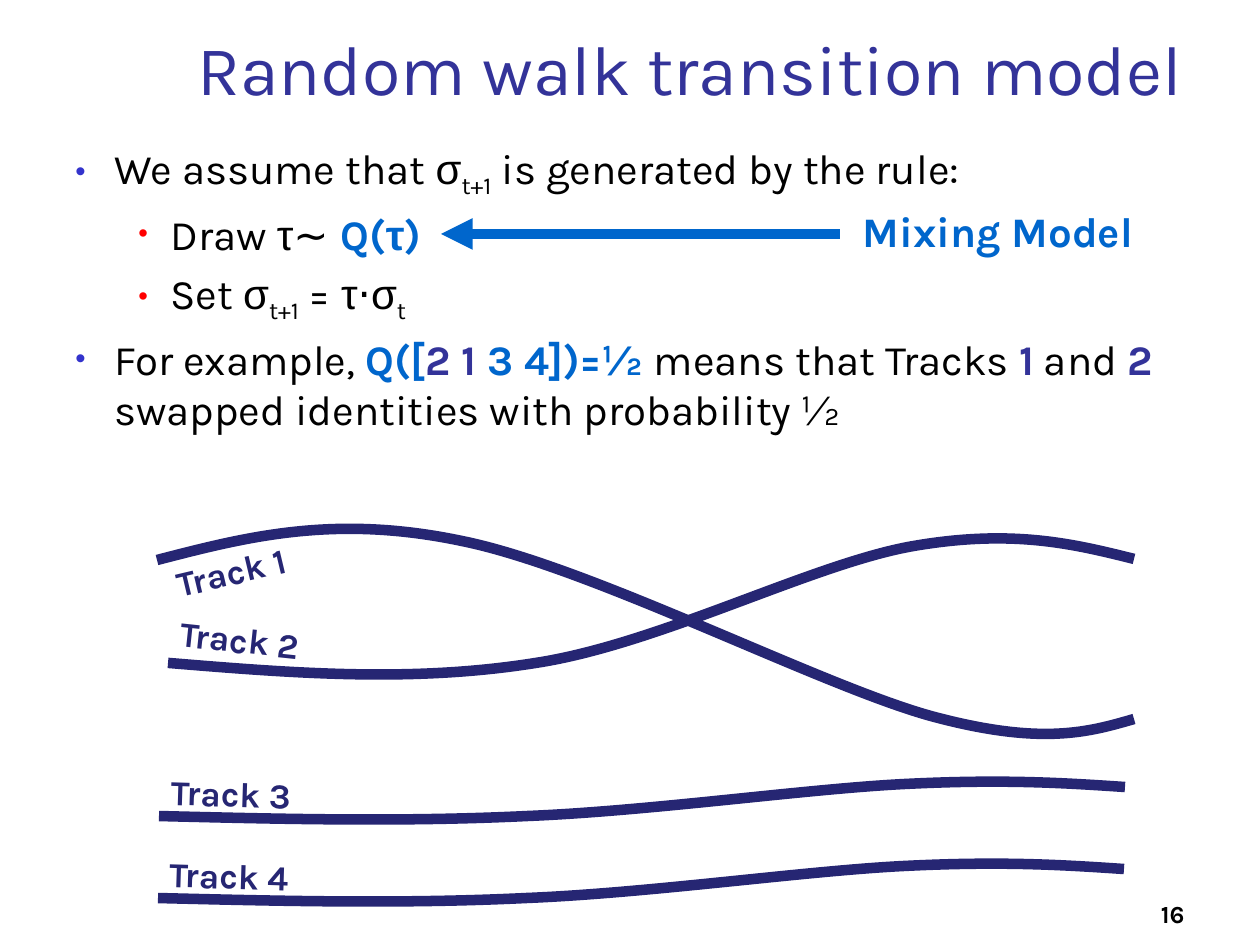
from lxml.etree import SubElement
from pptx import Presentation
from pptx.dml.color import RGBColor
from pptx.enum.shapes import MSO_CONNECTOR, MSO_SHAPE
from pptx.enum.text import MSO_ANCHOR, PP_ALIGN
from pptx.oxml.ns import qn
from pptx.util import Pt

EMU_PER_PX = 914400 / 126
BLACK = RGBColor(0x00, 0x00, 0x00)
WHITE = RGBColor(0xFF, 0xFF, 0xFF)
INDIGO = RGBColor(0x33, 0x33, 0x99)
BLUE = RGBColor(0x00, 0x66, 0xCC)
NAVY = RGBColor(0x26, 0x26, 0x73)
BULLET_BLUE = RGBColor(0x33, 0x33, 0xCC)
BULLET_RED = RGBColor(0xFF, 0x00, 0x00)

FONT, GREEK_FONT = "Karla", "Arial"

STYLES = {
    "plain": (FONT, BLACK, False, 0),
    "greek": (GREEK_FONT, BLACK, False, 0),
    "sub": (FONT, BLACK, False, -25000),
    "model": (FONT, BLUE, True, 0),
    "model greek": (GREEK_FONT, BLUE, True, 0),
    "track": (FONT, INDIGO, True, 0),
}
LEVELS = [
    {"margin": 39, "hanging": 39, "color": BULLET_BLUE, "size": 70},
    {"margin": 95, "hanging": 32, "color": BULLET_RED, "size": 65},
]
RULES = [
    (0, [("We assume that ", "plain"), ("σ", "greek"), ("t+1", "sub"),
         (" is generated by the rule:", "plain")]),
    (1, [("Draw ", "plain"), ("τ∼ ", "greek"), ("Q(", "model"),
         ("τ", "model greek"), (")", "model")]),
    (1, [("Set ", "plain"), ("σ", "greek"), ("t+1", "sub"), (" = ", "plain"),
         ("τ⋅σ", "greek"), ("t", "sub")]),
    (0, [("For example, ", "plain"), ("Q([", "model"), ("2 1", "track"),
         (" 3 4])=½", "model"), (" means that Tracks ", "plain"), ("1", "track"),
         (" and ", "plain"), ("2", "track"),
         (" swapped identities with probability ½", "plain")]),
]

STEADY_CURVE = [(159, 816), (281, 819), (402, 822), (527, 816), (651, 811),
                (805, 789), (905, 784), (1004, 779), (1065, 783), (1125, 787)]
TRACKS = [
    ("Track 1", (147, 544), -13.5,
     [(157, 560), (246, 537), (334, 514), (462, 541), (591, 567),
      (819, 685), (931, 716), (1042, 746), (1089, 732), (1134, 719)]),
    ("Track 2", (156, 612), 6.1,
     [(168, 663), (290, 673), (411, 683), (536, 663), (660, 644),
      (814, 563), (914, 546), (1013, 529), (1074, 544), (1134, 559)]),
    ("Track 3", (147, 766), 1.7, STEADY_CURVE),
    ("Track 4", (145, 848), 1.7, [(x - 1, y + 82) for x, y in STEADY_CURVE]),
]


def px(length):
    return round(length * EMU_PER_PX)


def write(shape, text, size, color, bold=False, align=PP_ALIGN.LEFT, anchor=MSO_ANCHOR.TOP):
    frame = shape.text_frame
    frame.word_wrap = True
    frame.vertical_anchor = anchor
    frame.text = text
    paragraph = frame.paragraphs[0]
    paragraph.alignment = align
    font = paragraph.runs[0].font
    font.name, font.size, font.bold = FONT, Pt(size), bold
    font.color.rgb = color


def add_text(slide, box, text, size, color, **layout):
    shape = slide.shapes.add_textbox(*map(px, box))
    write(shape, text, size, color, **layout)
    return shape


def add_bullet(paragraph, level):
    style = LEVELS[level]
    paragraph.level = level
    properties = paragraph._p.get_or_add_pPr()
    properties.set("marL", str(px(style["margin"])))
    properties.set("indent", str(-px(style["hanging"])))
    bullet_color = SubElement(properties, qn("a:buClr"))
    SubElement(bullet_color, qn("a:srgbClr"), val=str(style["color"]))
    SubElement(properties, qn("a:buSzPct"), val=str(style["size"] * 1000))
    SubElement(properties, qn("a:buFont"), typeface="Arial")
    SubElement(properties, qn("a:buChar"), char="•")


def add_piece(paragraph, text, style):
    name, color, bold, baseline = STYLES[style]
    run = paragraph.add_run()
    run.text = text
    run.font.name, run.font.size, run.font.bold = name, Pt(24), bold
    run.font.color.rgb = color
    properties = run._r.get_or_add_rPr()
    properties.set("kern", "0")
    for script in ("a:ea", "a:cs"):
        SubElement(properties, qn(script), typeface=name)
    if baseline:
        properties.set("baseline", str(baseline))


def add_rules(slide, box):
    body = slide.shapes.add_textbox(*map(px, box))
    body.line.color.rgb = WHITE
    body.line.width = Pt(0.75)
    frame = body.text_frame
    frame.word_wrap = True
    for index, (level, pieces) in enumerate(RULES):
        paragraph = frame.add_paragraph() if index else frame.paragraphs[0]
        add_bullet(paragraph, level)
        if index:
            paragraph.space_before = Pt(5)
        for text, style in pieces:
            add_piece(paragraph, text, style)


def add_mixing_model(slide):
    label = slide.shapes.add_shape(MSO_SHAPE.RECTANGLE, *map(px, (809, 199, 378, 63)))
    label.shadow.inherit = False
    label.fill.solid()
    label.fill.fore_color.rgb = WHITE
    label.line.color.rgb = WHITE
    label.line.width = Pt(3)
    write(label, "Mixing Model", 24, BLUE, bold=True, align=PP_ALIGN.CENTER)

    arrow = slide.shapes.add_connector(MSO_CONNECTOR.STRAIGHT, *map(px, (840, 234, 441, 234)))
    arrow.line.color.rgb = BLUE
    arrow.line.width = Pt(6)
    SubElement(arrow.line._get_or_add_ln(), qn("a:tailEnd"), type="triangle")
    SubElement(arrow._element.spPr, qn("a:effectLst"))


def bend_segments(curve):
    outline = next(curve._element.iter(qn("a:path")))
    lines = outline.findall(qn("a:lnTo"))
    for start in range(0, len(lines), 3):
        bezier = SubElement(outline, qn("a:cubicBezTo"))
        for line in lines[start:start + 3]:
            bezier.append(line[0])
            outline.remove(line)


def add_track(slide, name, corner, angle, controls):
    points = [(px(x), px(y)) for x, y in controls]
    builder = slide.shapes.build_freeform(*points[0])
    builder.add_line_segments(points[1:], close=False)
    curve = builder.convert_to_shape()
    bend_segments(curve)
    curve.shadow.inherit = False
    curve.fill.background()
    curve.line.color.rgb = NAVY
    curve.line.width = Pt(6)
    label = add_text(slide, (*corner, 168, 54), name, 20, NAVY,
                     bold=True, align=PP_ALIGN.CENTER)
    label.rotation = angle


def main():
    presentation = Presentation()
    presentation.slide_width, presentation.slide_height = px(1260), px(945)
    slide = presentation.slides.add_slide(presentation.slide_layouts[6])
    add_text(slide, (185, 11, 1033, 105), "Random walk transition model", 40, INDIGO,
             anchor=MSO_ANCHOR.BOTTOM)
    add_rules(slide, (63, 136, 1144, 708))
    add_mixing_model(slide)
    for track in TRACKS:
        add_track(slide, *track)
    add_text(slide, (935, 872, 262, 63), "16", 14, BLACK, bold=True,
             align=PP_ALIGN.RIGHT, anchor=MSO_ANCHOR.BOTTOM)
    presentation.save("out.pptx")


if __name__ == "__main__":
    main()
